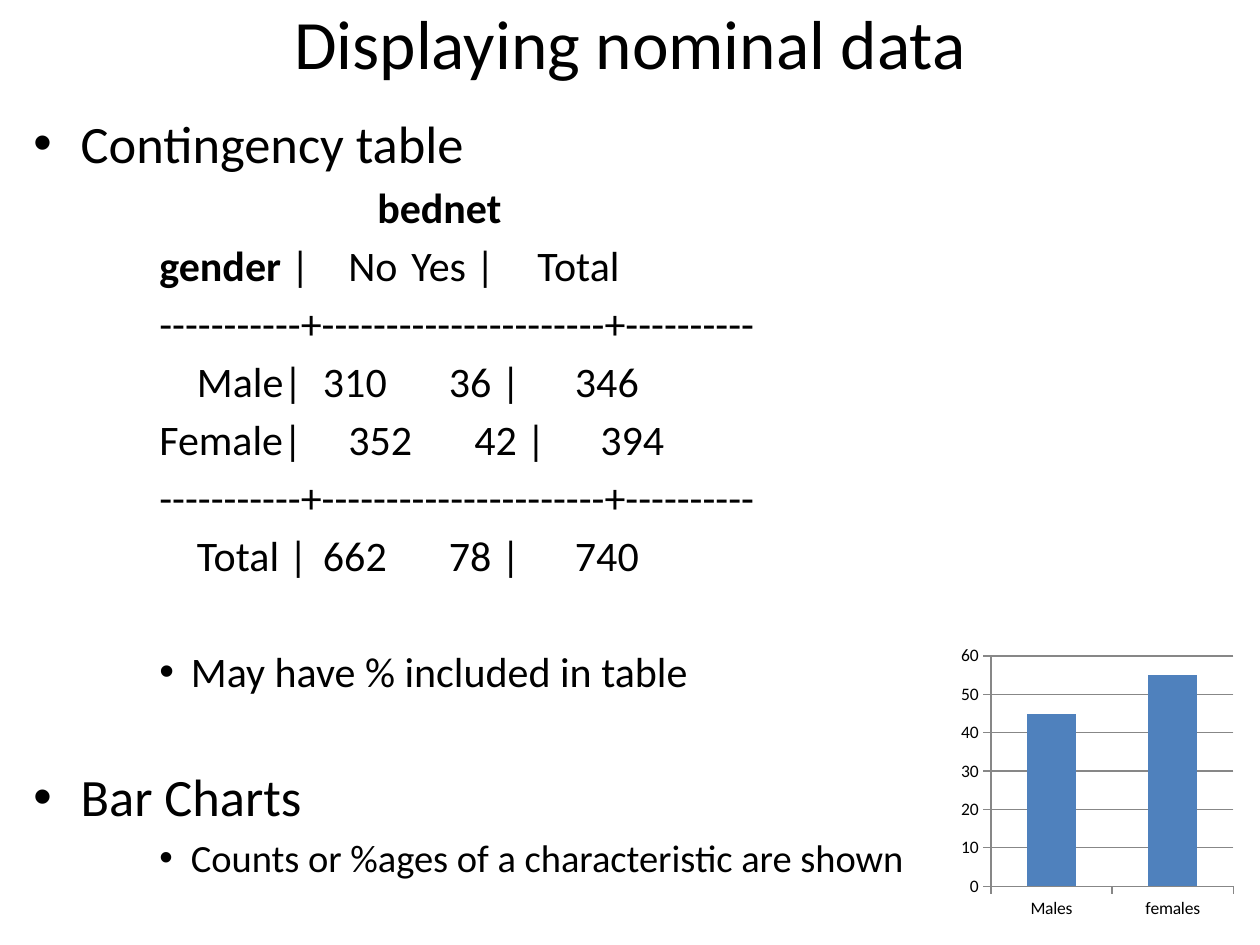
from dataclasses import dataclass

from lxml import etree
from pptx import Presentation
from pptx.chart.data import CategoryChartData
from pptx.dml.color import RGBColor
from pptx.enum.chart import XL_CHART_TYPE, XL_TICK_MARK
from pptx.enum.text import MSO_ANCHOR, PP_ALIGN
from pptx.oxml.ns import qn
from pptx.util import Pt

COLUMNS = XL_CHART_TYPE.COLUMN_CLUSTERED
TICK_OUT = XL_TICK_MARK.OUTSIDE
MIDDLE = MSO_ANCHOR.MIDDLE
CENTER = PP_ALIGN.CENTER

BLACK = RGBColor(0x00, 0x00, 0x00)
BLUE = RGBColor(0x4F, 0x81, 0xBD)
GRAY = RGBColor(0x87, 0x87, 0x87)
FONT = "Calibri"
TITLE_ONLY = 5
TABLE_LEFT = 72
TOTAL_LEFT = 93.5
SPACE_RATIO = 0.18
BLANK_LINE = 33.5
RULE = "+".join("-" * width for width in (11, 22, 10))


@dataclass(frozen=True)
class Line:
    text: str
    left: float = TABLE_LEFT
    size: float = 24
    hanging: float = 0  # a hanging line carries a bullet
    stops: tuple[float, ...] = ()  # tab stops, from the left of the text
    bold: str = ""  # opening words in bold
    gap: float = 0  # extra space above


LINES = (
    Line("Contingency table", left=27, size=30, hanging=27),
    Line("", left=196.5, bold="bednet"),
    Line(" |\tNo\tYes |\tTotal", stops=(207, 289, 364), bold="gender"),
    Line(RULE),
    Line("Male|\t310\t36 |\t346", left=TOTAL_LEFT, stops=(192, 277, 356)),
    Line("Female|\t352\t42 |\t394", stops=(191.5, 276.5, 355.5)),
    Line(RULE),
    Line("Total |\t662\t78 |\t740", left=TOTAL_LEFT, stops=(195, 280.5, 359)),
    Line("May have % included in table", left=90, hanging=18, gap=BLANK_LINE),
    Line("Bar Charts", left=27, size=30, hanging=27, gap=BLANK_LINE),
    Line("Counts or %ages of a characteristic are shown", left=90, size=22, hanging=18),
)


def format_font(font, *, size: float, bold: bool = False) -> None:
    font.name = FONT
    font.size = Pt(size)
    font.bold = bold
    font.color.rgb = BLACK


def add_span(para, text: str, *, size: float, bold: bool = False) -> None:
    span = para.add_run()
    span.text = text
    format_font(span.font, size=size, bold=bold)


def add_line(para, line: Line, *, first: bool) -> None:
    properties = para._p.get_or_add_pPr()
    properties.set("marL", str(Pt(line.left)))
    properties.set("indent", str(-Pt(line.hanging)))
    if line.hanging:
        etree.SubElement(properties, qn("a:buFont"), typeface="Arial")
        etree.SubElement(properties, qn("a:buChar"), char="•")
    if line.stops:
        tabs = etree.SubElement(properties, qn("a:tabLst"))
        for stop in line.stops:
            etree.SubElement(tabs, qn("a:tab"), pos=str(Pt(stop)), algn="l")
    para.space_before = Pt(0 if first else line.size * SPACE_RATIO + line.gap)
    if line.bold:
        add_span(para, line.bold, size=line.size, bold=True)
    if line.text:
        add_span(para, line.text, size=line.size)


def add_title(page, text: str) -> None:
    title = page.shapes.title
    title.left, title.top, title.width, title.height = Pt(36), Pt(0), Pt(648), Pt(48)
    title.text_frame.vertical_anchor = MIDDLE
    para = title.text_frame.paragraphs[0]
    para.alignment = CENTER
    add_span(para, text, size=39.6)


def add_body(page, lines: tuple[Line, ...]) -> None:
    box = page.shapes.add_textbox(Pt(12), Pt(60), Pt(702), Pt(468))
    frame = box.text_frame
    frame.word_wrap = True
    for index, line in enumerate(lines):
        para = frame.add_paragraph() if index else frame.paragraphs[0]
        add_line(para, line, first=index == 0)


def add_gender_chart(page) -> None:
    data = CategoryChartData()
    data.categories = ("Males", "females")
    data.add_series("Series 1", (45, 55))
    chart = page.shapes.add_chart(
        COLUMNS, Pt(546), Pt(366), Pt(162), Pt(162), data
    ).chart
    chart.has_title = False
    chart.has_legend = False
    format_font(chart.font, size=10)

    plot = chart.plots[0]
    plot.gap_width = 150
    plot.vary_by_categories = False
    fill = plot.series[0].format.fill
    fill.solid()
    fill.fore_color.rgb = BLUE

    values = chart.value_axis
    values.minimum_scale, values.maximum_scale, values.major_unit = 0, 60, 10
    values.has_major_gridlines = True
    values.major_gridlines.format.line.color.rgb = GRAY
    for axis in (chart.category_axis, values):
        axis.major_tick_mark = TICK_OUT
        axis.format.line.color.rgb = GRAY


def main() -> None:
    deck = Presentation()
    deck.slide_width, deck.slide_height = Pt(720), Pt(540)
    page = deck.slides.add_slide(deck.slide_layouts[TITLE_ONLY])
    add_title(page, "Displaying nominal data")
    add_body(page, LINES)
    add_gender_chart(page)
    deck.save("out.pptx")


if __name__ == "__main__":
    main()
